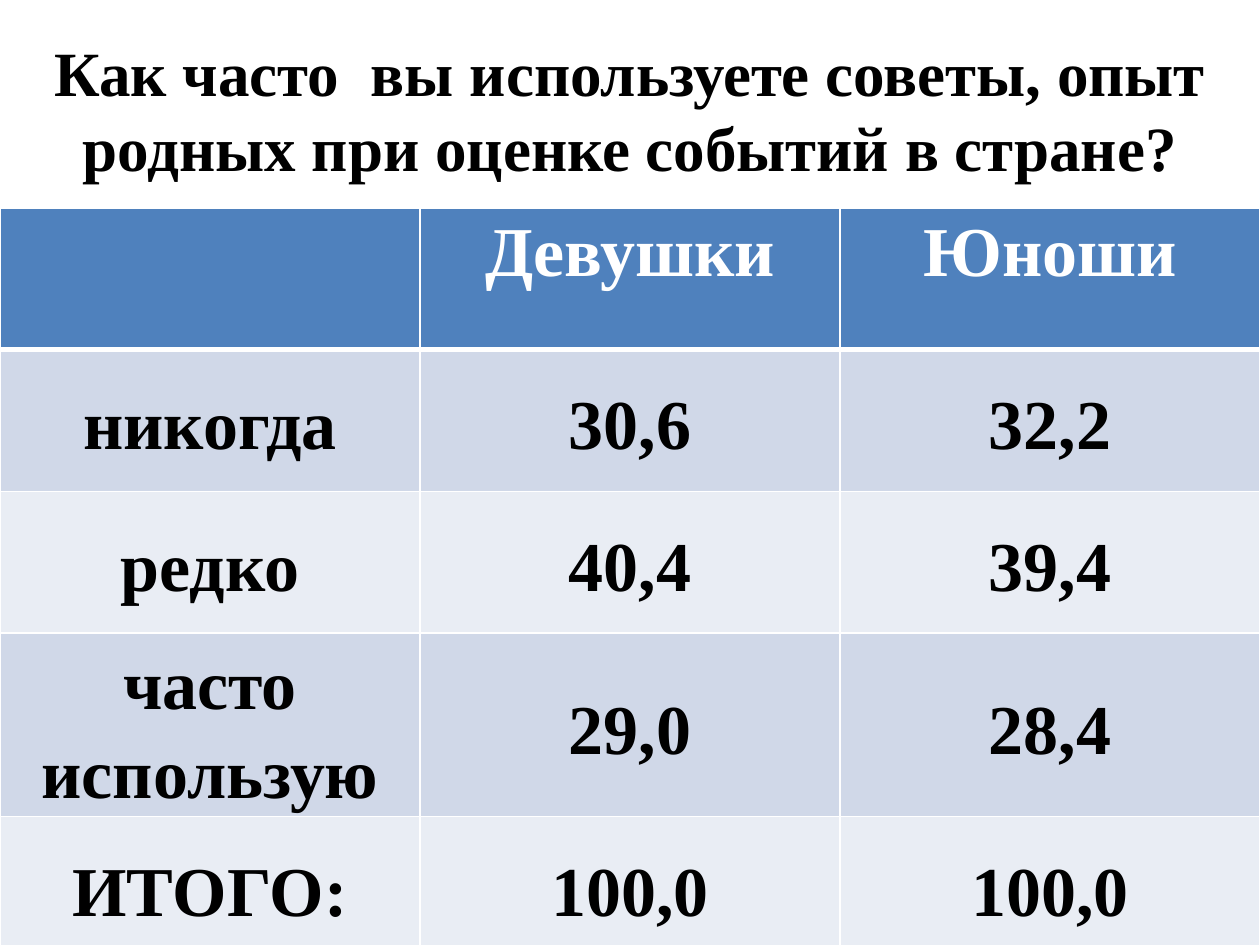
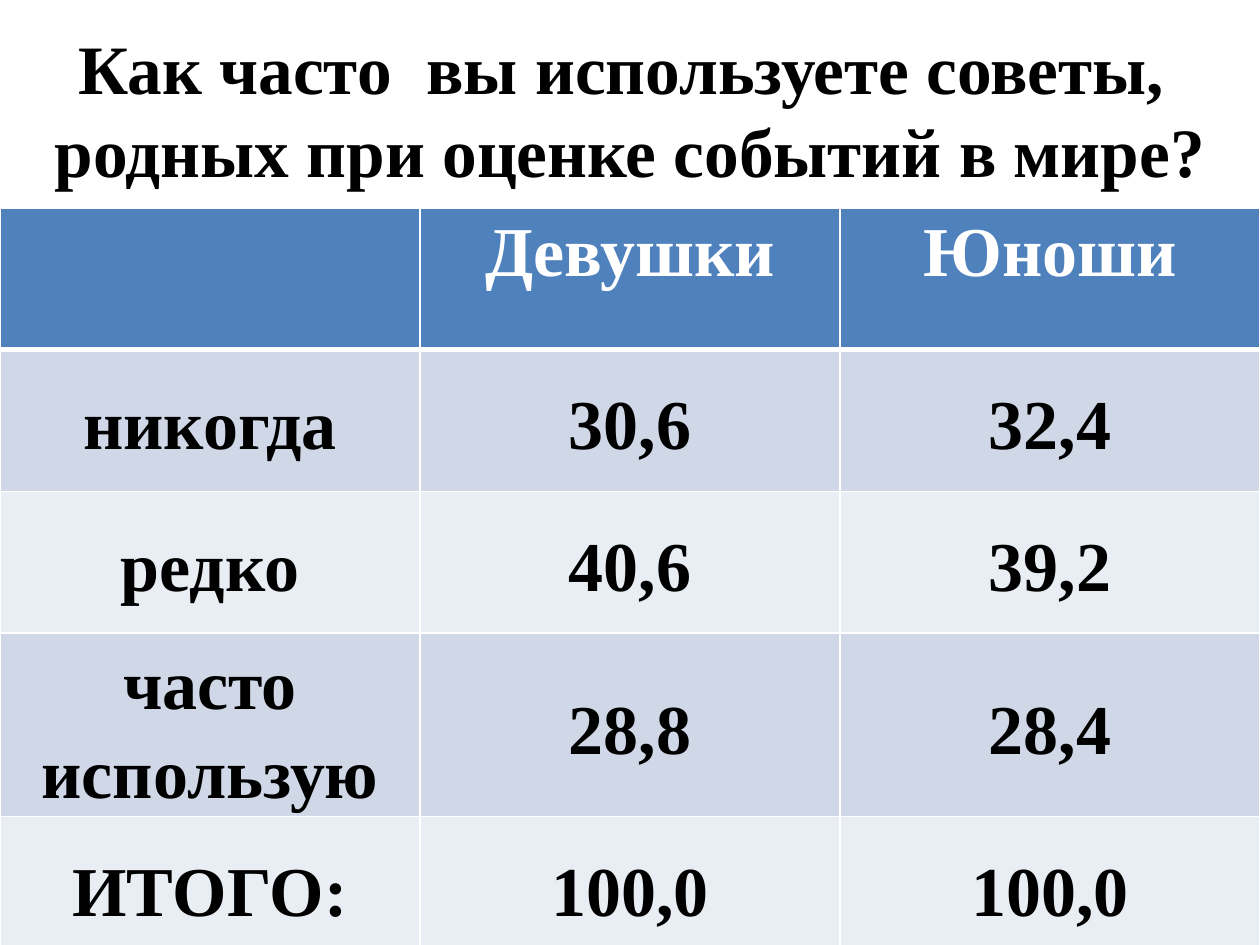
import pptx
import pptx.util
import pptx.dml.color
import pptx.enum.text
import pptx.oxml
import pptx.oxml.ns

FONT = "Times New Roman"
BLACK, WHITE = "000000", "FFFFFF"
HEADER_FILL = "4F81BD"
BAND_FILLS = ["E9EDF4", "D0D8E8"]
TITLE_ONLY = 5
TITLE_SHARE = 0.23
TABLE_TOP_SHARE = 0.22
ROW_SHARE = 0.15
CELL_INSET = pptx.util.Inches(0.02)
TABLE_SIZE = 40
GROUPS = ["", "Девушки", "Юноши"]
ANSWERS = ["никогда", "редко", "часто использую", "ИТОГО:"]

SURVEYS = [
    {
        "question": "Как часто  вы используете советы, опыт родных при оценке событий в стране?",
        "size": 36,
        "girls": ["30,6", "40,4", "29,0", "100,0"],
        "boys": ["32,2", "39,4", "28,4", "100,0"],
    },
    {
        "question": "Как часто  вы используете советы,  родных при оценке событий в мире?",
        "size": 39.6,
        "girls": ["30,6", "40,6", "28,8", "100,0"],
        "boys": ["32,4", "39,2", "28,4", "100,0"],
    },
]


def colour(value):
    return pptx.dml.color.RGBColor.from_string(value)


def write(frame, text, size, ink, spacing=None):
    paragraph = frame.paragraphs[0]
    paragraph.alignment = pptx.enum.text.PP_ALIGN.CENTER
    if spacing:
        paragraph.line_spacing = spacing
    if text:
        run = paragraph.add_run()
        run.text = text
        run.font.name = FONT
        run.font.size = pptx.util.Pt(size)
        run.font.bold = True
        run.font.color.rgb = colour(ink)


def add_question(slide, box, question, size):
    title = slide.shapes.title
    title.left, title.top, title.width, title.height = box
    frame = title.text_frame
    frame.word_wrap = True
    frame.auto_size = pptx.enum.text.MSO_AUTO_SIZE.NONE
    frame.vertical_anchor = pptx.enum.text.MSO_ANCHOR.MIDDLE
    write(frame, question, size, BLACK)


def draw_borders(cell, row):
    widths = {"L": 1, "R": 1, "T": 3 if row == 1 else 1, "B": 3 if row == 0 else 1}
    properties = cell._tc.get_or_add_tcPr()
    for position, (side, width) in enumerate(widths.items()):
        properties.insert(position, pptx.oxml.parse_xml(
            f'<a:ln{side} {pptx.oxml.ns.nsdecls("a")} w="{pptx.util.Pt(width)}">'
            f'<a:solidFill><a:srgbClr val="{WHITE}"/></a:solidFill></a:ln{side}>'))


def format_cell(cell, row, text):
    cell.fill.solid()
    if row == 0:
        cell.fill.fore_color.rgb = colour(HEADER_FILL)
        write(cell.text_frame, text, TABLE_SIZE, WHITE)
    else:
        cell.fill.fore_color.rgb = colour(BAND_FILLS[row % 2])
        cell.vertical_anchor = pptx.enum.text.MSO_ANCHOR.MIDDLE
        cell.margin_left = cell.margin_right = CELL_INSET
        cell.margin_top = cell.margin_bottom = CELL_INSET
        write(cell.text_frame, text, TABLE_SIZE, BLACK, 1.15)
    draw_borders(cell, row)


def add_results(slide, box, girls, boys):
    records = [GROUPS, *zip(ANSWERS, girls, boys)]
    results = slide.shapes.add_table(len(records), len(GROUPS), *box).table
    for row, record in enumerate(records):
        for column, text in enumerate(record):
            format_cell(results.cell(row, column), row, text)


def add_survey(deck, survey):
    slide = deck.slides.add_slide(deck.slide_layouts[TITLE_ONLY])
    width, height = deck.slide_width, deck.slide_height
    title_box = (0, 0, width, int(height * TITLE_SHARE))
    table_height = int(height * ROW_SHARE * (len(ANSWERS) + 1))
    table_box = (0, int(height * TABLE_TOP_SHARE), width, table_height)
    add_question(slide, title_box, survey["question"], survey["size"])
    add_results(slide, table_box, survey["girls"], survey["boys"])


def main():
    deck = pptx.Presentation()
    deck.slide_width = pptx.util.Inches(10)
    deck.slide_height = pptx.util.Inches(7.5)
    for survey in SURVEYS:
        add_survey(deck, survey)
    deck.save("out.pptx")


if __name__ == "__main__":
    main()
